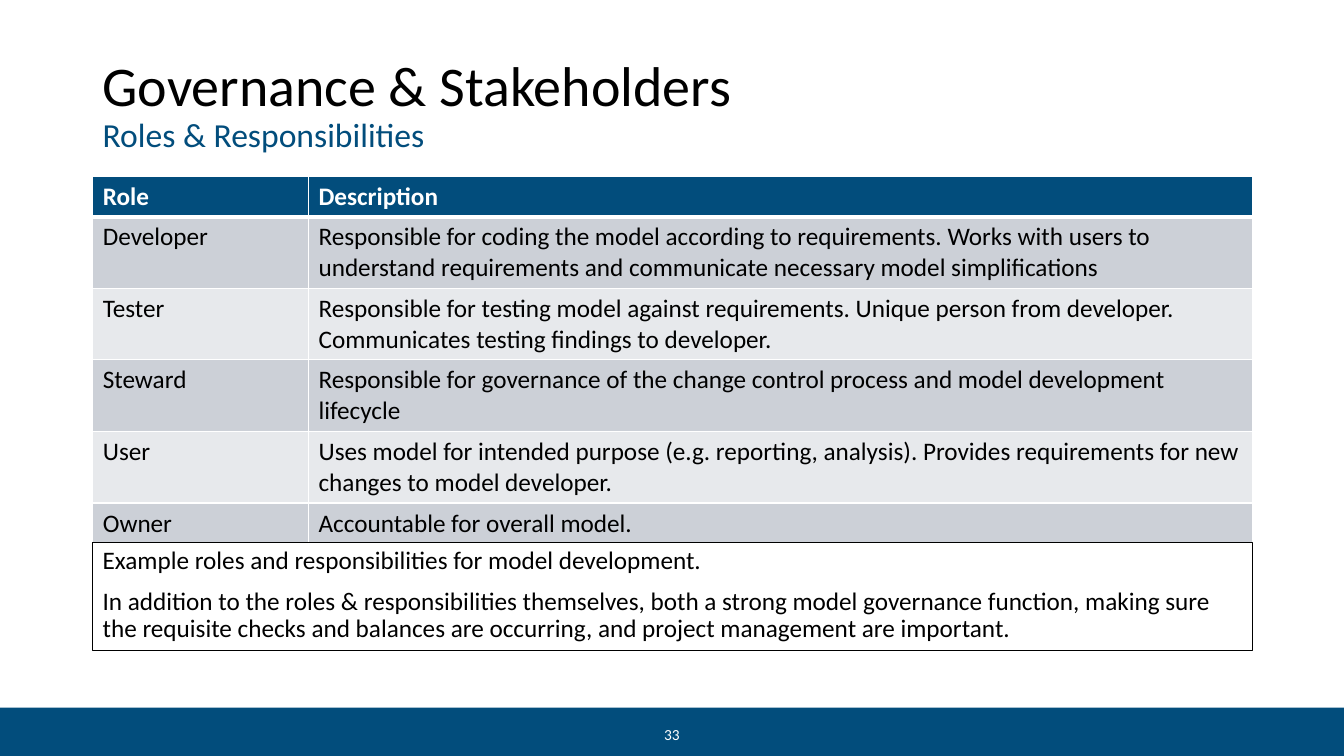
from lxml import etree
from pptx import Presentation
from pptx.dml.color import RGBColor
from pptx.enum import shapes, text
from pptx.oxml.ns import qn
from pptx.util import Inches, Pt

NAVY, WHITE, BLACK = "024D7C", "FFFFFF", "000000"
DARK_BAND, LIGHT_BAND = "CCD0D7", "E7E9EC"
LEFT, WIDTH = Inches(0.92), Inches(11.5)

ROLES = [
    ("Role", "Description"),
    ("Developer", "Responsible for coding the model according to requirements. Works with users to "
                  "understand requirements and communicate necessary model simplifications"),
    ("Tester", "Responsible for testing model against requirements. Unique person from developer. "
               "Communicates testing findings to developer."),
    ("Steward", "Responsible for governance of the change control process and model development lifecycle"),
    ("User", "Uses model for intended purpose (e.g. reporting, analysis). Provides requirements for new "
             "changes to model developer."),
    ("Owner", "Accountable for overall model."),
]
ROW_HEIGHTS = [0.4, 0.71, 0.71, 0.71, 0.71, 0.4]
NOTES = [
    "Example roles and responsibilities for model development.",
    "In addition to the roles & responsibilities themselves, both a strong model governance function, "
    "making sure the requisite checks and balances are occurring, and project management are important.",
]


def rgb(color):
    return RGBColor.from_string(color)


def set_font(font, size, color, bold=False):
    font.name, font.size, font.bold = "Calibri", Pt(size), bold
    font.color.rgb = rgb(color)


prs = Presentation()
prs.slide_width, prs.slide_height = Inches(13.33), Inches(7.5)
s = prs.slides.add_slide(prs.slide_layouts[6])

# Footer band and page number
band = s.shapes.add_shape(shapes.MSO_SHAPE.RECTANGLE, 0, Inches(7.02), prs.slide_width, Inches(0.51))
band.shadow.inherit = False
band.fill.solid()
band.fill.fore_color.rgb = rgb(NAVY)
band.line.fill.background()

number = s.shapes.add_textbox(Inches(6.31), Inches(7.17), Inches(0.71), Inches(0.22))
tf = number.text_frame
tf.word_wrap = True
tf.vertical_anchor = text.MSO_ANCHOR.MIDDLE
p = tf.paragraphs[0]
p.text = "33"
p.alignment = text.PP_ALIGN.CENTER
set_font(p.font, 11, WHITE)

# Title with subtitle
title = s.shapes.add_textbox(LEFT, Inches(0.36), WIDTH, Inches(1.4))
tf = title.text_frame
tf.word_wrap = True
tf.vertical_anchor = text.MSO_ANCHOR.MIDDLE
p = tf.paragraphs[0]
p.line_spacing = 0.9
r = p.add_run()
r.text = "Governance & Stakeholders"
set_font(r.font, 40, BLACK)
p.add_line_break()
r = p.add_run()
r.text = "Roles & Responsibilities"
set_font(r.font, 24, NAVY)

# Roles table
table = s.shapes.add_table(len(ROLES), 2, LEFT, Inches(1.75), WIDTH, Inches(sum(ROW_HEIGHTS))).table
table.columns[0].width, table.columns[1].width = Inches(2.14), Inches(9.36)
for i, (row, height) in enumerate(zip(ROLES, ROW_HEIGHTS)):
    table.rows[i].height = Inches(height)
    header = i == 0
    fill = NAVY if header else DARK_BAND if i % 2 else LIGHT_BAND
    for j, words in enumerate(row):
        cell = table.cell(i, j)
        cell.fill.solid()
        cell.fill.fore_color.rgb = rgb(fill)
        p = cell.text_frame.paragraphs[0]
        p.text = words
        set_font(p.font, 18, WHITE if header else BLACK, header)
        tcPr = cell._tc.get_or_add_tcPr()
        for k, side in enumerate(("lnL", "lnR", "lnT", "lnB")):
            thick = (header and side == "lnB") or (i == 1 and side == "lnT")
            ln = etree.Element(qn(f"a:{side}"), w=str(Pt(3 if thick else 1)))
            paint = etree.SubElement(ln, qn("a:solidFill"))
            etree.SubElement(paint, qn("a:srgbClr"), val=WHITE)
            tcPr.insert(k, ln)

# Outlined remarks below the table
remarks = s.shapes.add_textbox(LEFT, Inches(5.38), WIDTH, Inches(1.07))
remarks.line.color.rgb = rgb(BLACK)
remarks.line.width = Pt(0.75)
tf = remarks.text_frame
tf.word_wrap = True
for i, words in enumerate(NOTES):
    p = tf.add_paragraph() if i else tf.paragraphs[0]
    p.text = words
    p.line_spacing = 0.9
    p.space_before = Pt(10 if i else 0)
    set_font(p.font, 18, BLACK)

prs.save("out.pptx")
